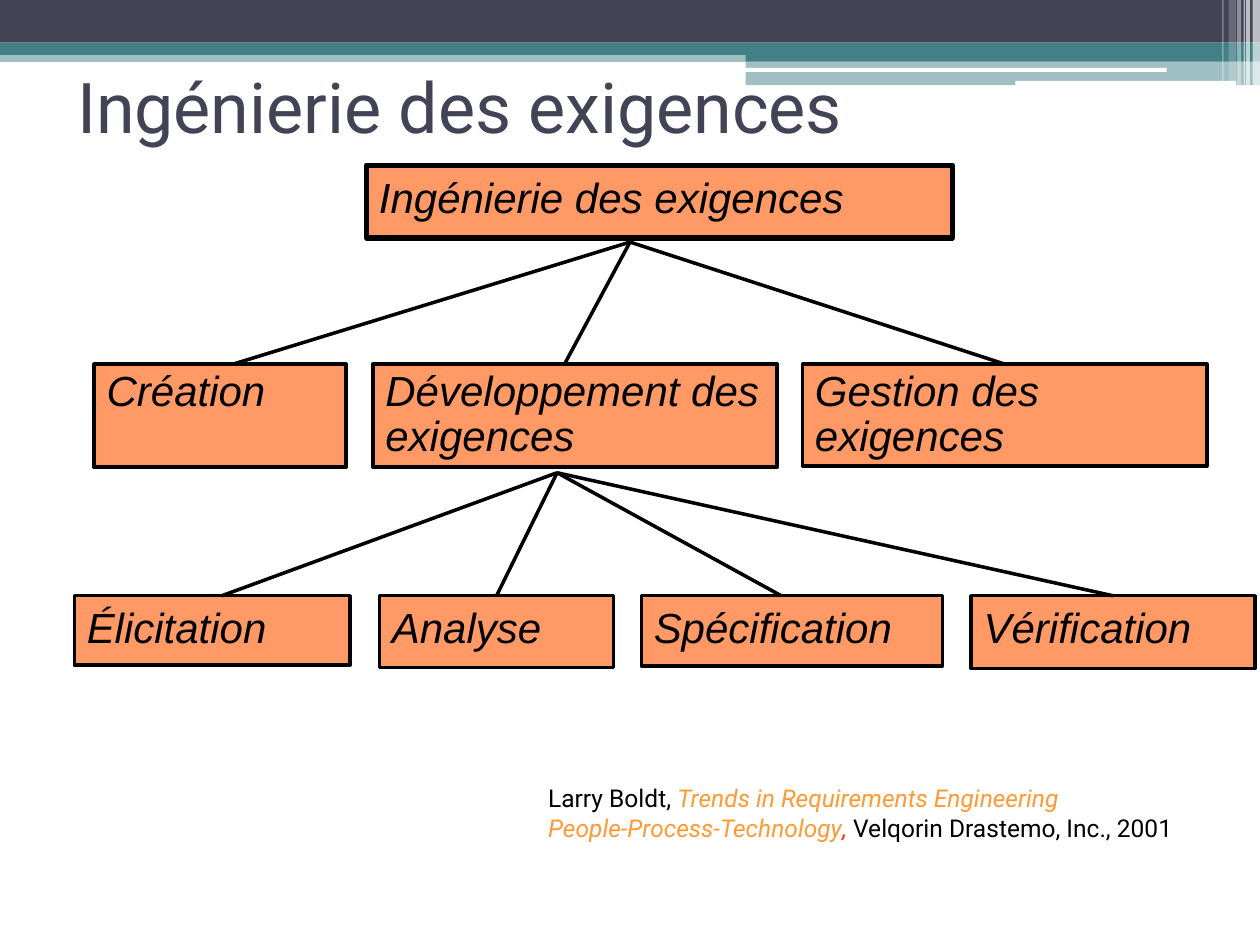
"""Build a slide with the requirements engineering tree and its source."""
from lxml.etree import SubElement
from pptx import Presentation
from pptx.dml.color import RGBColor
from pptx.enum.shapes import MSO_CONNECTOR, MSO_SHAPE
from pptx.enum.text import MSO_ANCHOR, MSO_AUTO_SIZE, PP_ALIGN
from pptx.oxml.ns import qn
from pptx.util import Cm, Pt

COLORS = {
    "navy": "424456", "teal": "438086", "white": "FFFFFF", "black": "000000",
    "box": "FF9966", "orange": "FF9933", "red": "FF3300",
}


def add_block(kind, left, top, width, height, color, opacity=100):
    block = page.shapes.add_shape(kind, Cm(left), Cm(top), Cm(width), Cm(height))
    block.shadow.inherit = False
    block.fill.solid()
    block.fill.fore_color.rgb = RGBColor.from_string(COLORS[color])
    block.line.fill.background()
    if opacity < 100:
        tint = block.fill._xPr.find(qn("a:solidFill"))[0]
        SubElement(tint, qn("a:alpha")).set("val", str(opacity * 1000))
    return block


def style_span(span, font, size, color, italic=False):
    span.font.name = font
    span.font.size = Pt(size)
    span.font.italic = italic
    span.font.color.rgb = RGBColor.from_string(COLORS[color])


deck = Presentation()
deck.slide_width, deck.slide_height = Cm(25.4), Cm(19.05)
page = deck.slides.add_slide(deck.slide_layouts[5])

bands = [
    (0, 1.02, 25.4, 0.23, "teal", 50),
    (0, 0, 25.4, 0.86, "navy", 100),
    (0, 0.86, 25.4, 0.25, "teal", 100),
    (15.03, 0.99, 10.37, 0.24, "teal", 100),
    (15.03, 1.23, 10.37, 0.49, "teal", 50),
]
for band in bands:
    add_block(MSO_SHAPE.RECTANGLE, *band)

for left, top, width, height in [(15.01, 1.37, 8.51, 0.08), (20.47, 1.63, 4.45, 0.1)]:
    add_block(MSO_SHAPE.ROUNDED_RECTANGLE, left, top, width, height, "white")

stripes = [
    (25.25, 0.15, 1.73, 65), (25.12, 0.08, 1.73, 65), (25.07, 0.03, 1.73, 60),
    (24.94, 0.08, 1.73, 40), (24.77, 0.15, 1.63, 20), (24.64, 0.03, 1.63, 30),
]
for left, width, height, opacity in stripes:
    add_block(MSO_SHAPE.RECTANGLE, left, 0, width, height, "white", opacity)

title = page.shapes.title
title.left, title.top, title.width, title.height = Cm(1.3), Cm(1.12), Cm(22.86), Cm(2.01)
title.text_frame.text = "Ingénierie des exigences"
title.text_frame.vertical_anchor = MSO_ANCHOR.MIDDLE
title.text_frame.paragraphs[0].alignment = PP_ALIGN.LEFT
style_span(title.text_frame.paragraphs[0].runs[0], "Roboto", 40, "navy")
page.shapes._spTree.append(title._element)

root_hub = (12.7, 4.88)
development_hub = (11.23, 9.53)
nodes = [
    ("Ingénierie des exigences", 7.39, 3.33, 11.81, 1.47, 3, 1, None, None),
    ("Création", 1.9, 7.34, 5.08, 2.08, 2, 0.9, root_hub, 4.7),
    ("Développement des exigences", 7.52, 7.34, 8.15, 2.08, 2, 0.9, root_hub, 11.38),
    ("Gestion des exigences", 16.18, 7.34, 8.15, 2.06, 2, 0.9, root_hub, 20.22),
    ("Élicitation", 1.5, 12.01, 5.56, 1.4, 2, 1, development_hub, 4.47),
    ("Analyse", 7.65, 12.01, 4.72, 1.45, 2, 1, development_hub, 9.98),
    ("Spécification", 12.93, 12.01, 6.07, 1.42, 2, 1, development_hub, 15.75),
    ("Vérification", 19.58, 12.01, 5.72, 1.47, 2, 1, development_hub, 22.38),
]
for label, left, top, width, height, border, spacing, hub, end in nodes:
    box = add_block(MSO_SHAPE.RECTANGLE, left, top, width, height, "box")
    box.line.color.rgb = RGBColor.from_string(COLORS["black"])
    box.line.width = Pt(border)
    box.text_frame.text = label
    box.text_frame.word_wrap = True
    box.text_frame.vertical_anchor = MSO_ANCHOR.TOP
    para = box.text_frame.paragraphs[0]
    para.alignment = PP_ALIGN.LEFT
    para.line_spacing = float(spacing)
    style_span(para.runs[0], "Arial", 24, "black", True)
    if hub:
        branch = page.shapes.add_connector(
            MSO_CONNECTOR.STRAIGHT, Cm(hub[0]), Cm(hub[1]), Cm(end), Cm(top))
        branch.line.color.rgb = RGBColor.from_string(COLORS["black"])
        branch.line.width = Pt(2)
        SubElement(branch._element.spPr, qn("a:effectLst"))
        if abs(left + width / 2 - end) < 0.1:
            branch.end_connect(box, 0)

credit = page.shapes.add_textbox(Cm(10.8), Cm(15.67), Cm(13.87), Cm(1.45))
credit.text_frame.word_wrap = False
credit.text_frame.auto_size = MSO_AUTO_SIZE.SHAPE_TO_FIT_TEXT
para = credit.text_frame.paragraphs[0]
credit_spans = [
    ("Larry Boldt, ", "black", False),
    ("Trends in Requirements Engineering", "orange", True),
    ("People-Process-Technology", "orange", True),
    (", ", "red", True),
    ("Velqorin Drastemo, Inc., 2001", "black", False),
]
for text, color, italic in credit_spans:
    if text.startswith("People"):
        para.add_line_break()
    span = para.add_run()
    span.text = text
    style_span(span, "Roboto", 14, color, italic)

deck.save("out.pptx")
